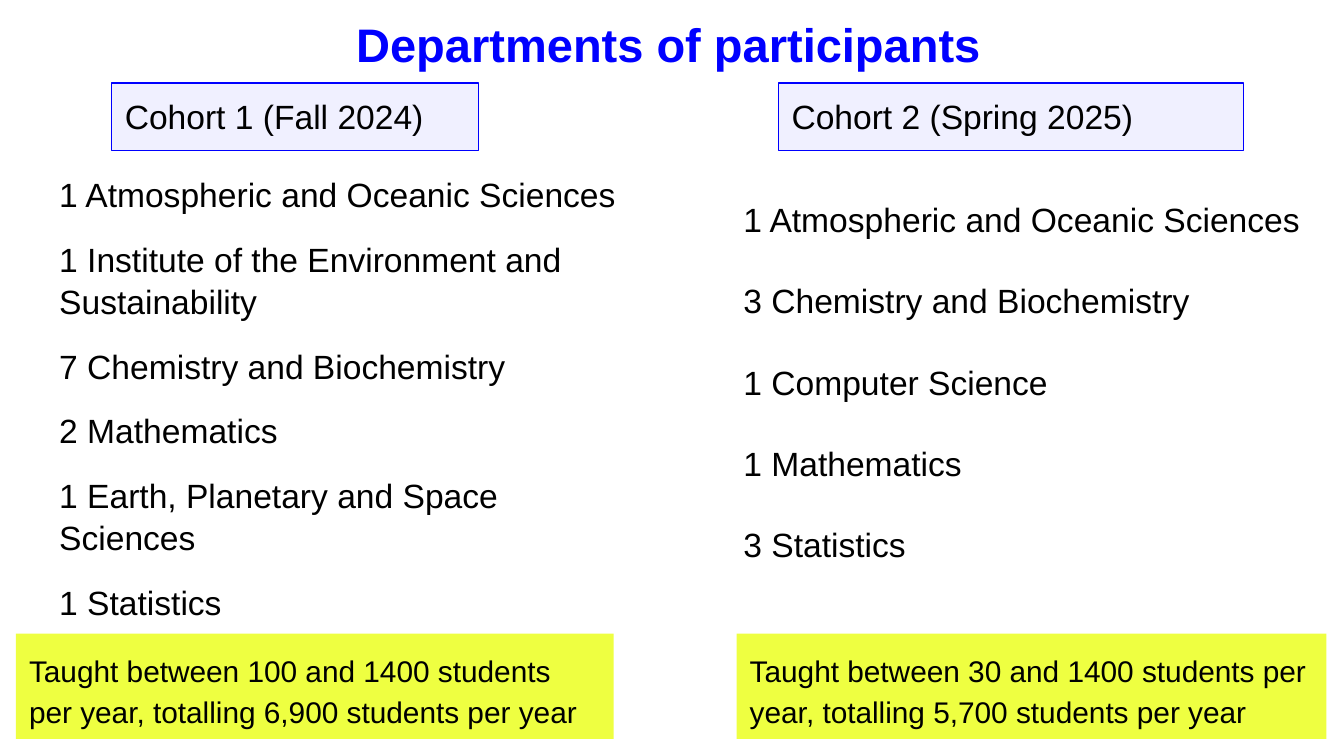
from dataclasses import dataclass

from pptx import Presentation
from pptx.dml.color import RGBColor
from pptx.enum.shapes import MSO_SHAPE
from pptx.enum.text import MSO_ANCHOR, MSO_AUTO_SIZE, PP_ALIGN
from pptx.oxml.ns import qn
from pptx.slide import Slide
from pptx.text.text import TextFrame
from pptx.util import Cm, Pt
from lxml.etree import SubElement


@dataclass(frozen=True)
class Theme:
    font: str = "Arial"
    blue: str = "0000FF"
    lime: str = "EEFF41"
    ink: str = "000000"
    title: float = 25.2
    body: float = 18
    note: float = 16
    tint: int = 6
    inset: float = 0.25


@dataclass(frozen=True)
class Box:
    left: float
    top: float
    width: float
    height: float

    def place(self) -> tuple:
        return Cm(self.left), Cm(self.top), Cm(self.width), Cm(self.height)


@dataclass(frozen=True)
class Cohort:
    label: str
    label_box: Box
    items: tuple[str, ...]
    list_box: Box
    leading: float
    gap: float
    note: str
    note_box: Box


THEME = Theme()
HEAD_TOP, HEAD_TALL = 1.57, 1.28
NOTE_TOP, NOTE_TALL = 11.98, 1.99

COHORTS = (
    Cohort(
        "Cohort 1 (Fall 2024)", Box(2.11, HEAD_TOP, 6.93, HEAD_TALL),
        (
            "1 Atmospheric and Oceanic Sciences",
            "1 Institute of the Environment and Sustainability",
            "7 Chemistry and Biochemistry",
            "2 Mathematics",
            "1 Earth, Planetary and Space Sciences",
            "1 Statistics",
        ),
        Box(0.87, 3, 11.3, 9.5), 1.05, 12,
        "Taught between 100 and 1400 students per year, "
        "totalling 6,900 students per year",
        Box(0.3, NOTE_TOP, 11.3, NOTE_TALL),
    ),
    Cohort(
        "Cohort 2 (Spring 2025)", Box(14.71, HEAD_TOP, 8.79, HEAD_TALL),
        (
            "1 Atmospheric and Oceanic Sciences",
            "3 Chemistry and Biochemistry",
            "1 Computer Science",
            "1 Mathematics",
            "3 Statistics",
        ),
        Box(13.8, 3.51, 11.6, 8.2), 1, 22,
        "Taught between 30 and 1400 students per year, "
        "totalling 5,700 students per year",
        Box(13.92, NOTE_TOP, 11.15, NOTE_TALL),
    ),
)


def write(frame: TextFrame, lines: tuple[str, ...], size: float,
          color: str = THEME.ink, bold: bool = False,
          leading: float = 1, gap: float = 0) -> None:
    """Fill a frame with left-aligned paragraphs, gap points apart."""
    frame.text = "\n".join(lines)
    frame.word_wrap = True
    frame.auto_size = MSO_AUTO_SIZE.NONE
    frame.vertical_anchor = MSO_ANCHOR.TOP
    frame.margin_left = frame.margin_right = Cm(THEME.inset)
    frame.margin_top = frame.margin_bottom = Cm(THEME.inset)
    for index, para in enumerate(frame.paragraphs):
        para.alignment = PP_ALIGN.LEFT
        para.line_spacing = leading
        para.space_before = Pt(gap if index else 0)
        for run in para.runs:
            run.font.name = THEME.font
            run.font.size = Pt(size)
            run.font.bold = bold
            run.font.color.rgb = RGBColor.from_string(color)


def add_panel(slide: Slide, box: Box, text: str, size: float, fill: str,
              tint: int = 100, edge: str | None = None,
              leading: float = 1) -> None:
    """Draw a filled rectangle with text; tint is the fill opacity in percent."""
    panel = slide.shapes.add_shape(MSO_SHAPE.RECTANGLE, *box.place())
    panel.shadow.inherit = False
    panel.fill.solid()
    panel.fill.fore_color.rgb = RGBColor.from_string(fill)
    if tint < 100:
        color = panel.fill._xPr.find(qn("a:solidFill"))[0]
        SubElement(color, qn("a:alpha")).set("val", str(tint * 1000))
    if edge:
        panel.line.color.rgb = RGBColor.from_string(edge)
        panel.line.width = Pt(0.75)
    else:
        panel.line.fill.background()
    write(panel.text_frame, (text,), size, leading=leading)


def add_cohort(slide: Slide, cohort: Cohort) -> None:
    items = slide.shapes.add_textbox(*cohort.list_box.place())
    write(items.text_frame, cohort.items, THEME.body,
          leading=cohort.leading, gap=cohort.gap)
    add_panel(slide, cohort.label_box, cohort.label, THEME.body,
              THEME.blue, tint=THEME.tint, edge=THEME.blue)
    add_panel(slide, cohort.note_box, cohort.note, THEME.note,
              THEME.lime, leading=1.15)


def main() -> None:
    deck = Presentation()
    deck.slide_width, deck.slide_height = Cm(25.4), Cm(14.29)
    slide = deck.slides.add_slide(deck.slide_layouts.get_by_name("Title Only"))
    title = slide.shapes.title
    title.left, title.top, title.width, title.height = Box(
        6.48, 0.05, 12.88, 1.6).place()
    write(title.text_frame, ("Departments of participants",), THEME.title,
          THEME.blue, bold=True)
    for cohort in COHORTS:
        add_cohort(slide, cohort)
    deck.save("out.pptx")


if __name__ == "__main__":
    main()
